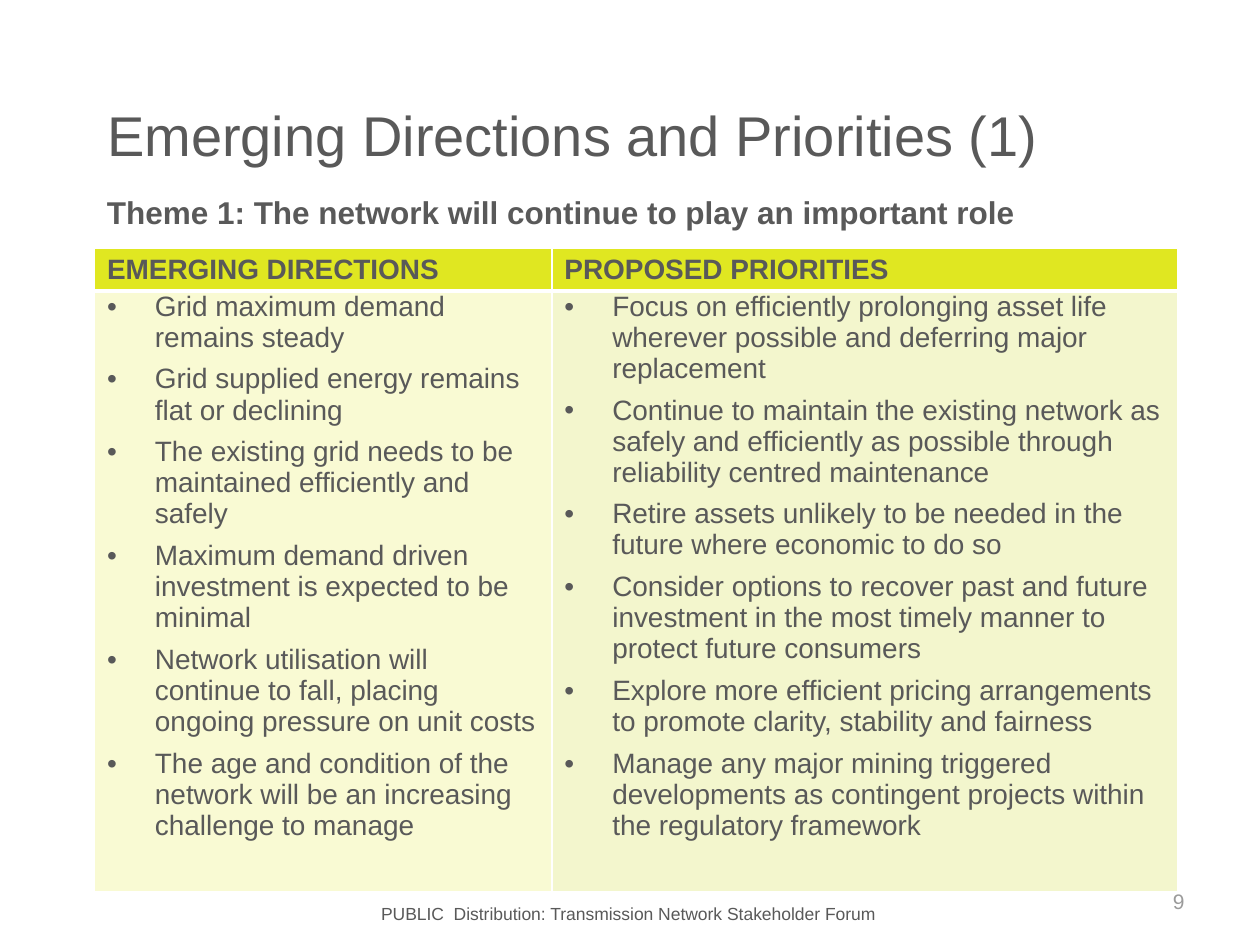
import pptx
import pptx.util
import pptx.dml.color
import pptx.enum.text
import pptx.oxml
import pptx.oxml.ns
import lxml.etree

Inches, Pt = pptx.util.Inches, pptx.util.Pt
Align = pptx.enum.text.PP_ALIGN
Anchor = pptx.enum.text.MSO_ANCHOR

GREY = "595959"
WHITE = "FFFFFF"
LIME = "E0E721"
INDENT = 0.38

HEADS = ["EMERGING DIRECTIONS", "PROPOSED PRIORITIES"]
TINTS = ["F9FAD3", "F3F6CD"]
WIDTHS = [3.63, 4.97]
HEIGHTS = [0.34, 4.77]
POINTS = [
    [
        "Grid maximum demand remains steady",
        "Grid supplied energy remains flat or declining",
        "The existing grid needs to be maintained efficiently and safely",
        "Maximum demand driven investment is expected to be minimal",
        "Network utilisation will continue to fall, placing ongoing pressure on unit costs",
        "The age and condition of the network will be an increasing challenge to manage",
    ],
    [
        "Focus on efficiently prolonging asset life wherever possible and deferring major replacement",
        "Continue to maintain the existing network as safely and efficiently as possible "
        "through reliability centred maintenance",
        "Retire assets unlikely to be needed in the future where economic to do so",
        "Consider options to recover past and future investment in the most timely manner "
        "to protect future consumers",
        "Explore more efficient pricing arrangements to promote clarity, stability and fairness",
        "Manage any major mining triggered developments as contingent projects within "
        "the regulatory framework",
    ],
]


def rgb(code):
    return pptx.dml.color.RGBColor.from_string(code)


def add_tag(parent, name, **attrs):
    tag = lxml.etree.SubElement(parent, pptx.oxml.ns.qn(name))
    for key, value in attrs.items():
        tag.set(key, str(value))
    return tag


def put_text(frame, lines, size=16, color=GREY, bold=False, align=Align.LEFT,
             anchor=Anchor.TOP, bullet=False):
    frame.word_wrap = True
    frame.vertical_anchor = anchor
    for i, line in enumerate(lines):
        para = frame.paragraphs[0] if i == 0 else frame.add_paragraph()
        para.alignment = align
        if bullet:
            para.space_before = Pt(3 if i else 0)
            para.space_after = Pt(3)
            props = para._p.get_or_add_pPr()
            props.set("marL", str(Inches(INDENT)))
            props.set("indent", str(-Inches(INDENT)))
            add_tag(props, "a:buFont", typeface="Arial")
            add_tag(props, "a:buChar", char="•")
        run = para.add_run()
        run.text = line
        font = run.font
        font.name, font.size, font.bold = "Arial", Pt(size), bold
        font.color.rgb = rgb(color)


def add_text(slide, text, left, top, width, height, **style):
    box = slide.shapes.add_textbox(*map(Inches, (left, top, width, height)))
    put_text(box.text_frame, [text], **style)


def add_title(slide, text):
    title = slide.shapes.title
    title.left, title.top = Inches(0.75), Inches(0.53)
    title.width, title.height = Inches(8.96), Inches(1.07)
    title.text_frame.auto_size = pptx.enum.text.MSO_AUTO_SIZE.NONE
    put_text(title.text_frame, [text], size=32, anchor=Anchor.MIDDLE)


def set_edge(cell, **widths):
    # Borders come before the fill in the cell's properties
    props = cell._tc.get_or_add_tcPr()
    for i, side in enumerate("LRTB"):
        line = add_tag(props, "a:ln" + side, w=Pt(widths.get(side, 1)))
        add_tag(add_tag(line, "a:solidFill"), "a:srgbClr", val=WHITE)
        props.insert(i, line)


def fill_cell(cell, lines, color, edges, **style):
    cell.margin_left = cell.margin_right = Inches(0.1)
    cell.margin_top = cell.margin_bottom = 0
    cell.fill.solid()
    cell.fill.fore_color.rgb = rgb(color)
    set_edge(cell, **edges)
    anchor = style.pop("anchor", Anchor.TOP)
    cell.vertical_anchor = anchor
    put_text(cell.text_frame, lines, **style)


def add_grid(slide):
    frame = slide.shapes.add_table(
        2, 2, Inches(0.75), Inches(1.97), Inches(sum(WIDTHS)), Inches(sum(HEIGHTS)))
    table = frame.table
    table.horz_banding = False
    for row, height in zip(table.rows, HEIGHTS):
        row.height = Inches(height)
    for i, width in enumerate(WIDTHS):
        table.columns[i].width = Inches(width)
        fill_cell(table.cell(0, i), [HEADS[i]], LIME, {"B": 3},
                  bold=True, anchor=Anchor.MIDDLE)
        fill_cell(table.cell(1, i), POINTS[i], TINTS[i], {"T": 3}, bullet=True)


def main():
    deck = pptx.Presentation()
    deck.slide_width, deck.slide_height = Inches(10), Inches(7.5)
    slide = deck.slides.add_slide(deck.slide_layouts[5])

    # Footer and page number
    add_text(slide, "PUBLIC  Distribution: Transmission Network Stakeholder Forum",
             2.23, 7.12, 5.51, 0.27, size=10, align=Align.CENTER)
    add_text(slide, "9", 7.17, 6.95, 2.33, 0.4, size=12, color="9B9B9B",
             align=Align.RIGHT, anchor=Anchor.MIDDLE)

    # Headings
    add_title(slide, "Emerging Directions and Priorities (1)")
    add_text(slide, "Theme 1: The network will continue to play an important role",
             0.75, 1.48, 8.6, 0.4, size=18, bold=True)

    # Directions beside priorities
    add_grid(slide)
    deck.save("out.pptx")


if __name__ == "__main__":
    main()
